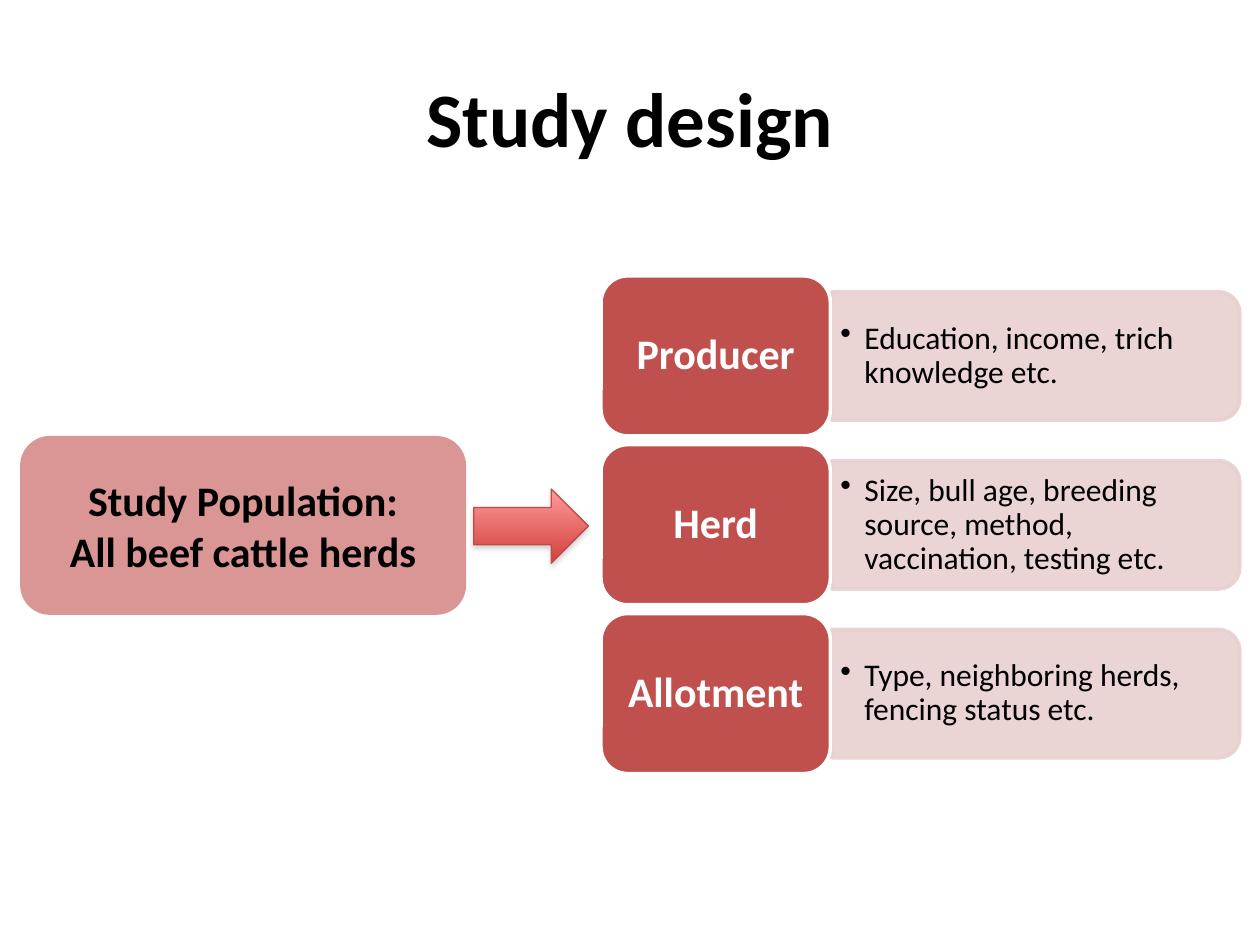
from dataclasses import dataclass

from lxml.etree import SubElement
from pptx import Presentation
from pptx.dml.color import RGBColor
from pptx.enum.shapes import MSO_SHAPE as Shape
from pptx.enum.text import MSO_ANCHOR as Anchor, PP_ALIGN as Align
from pptx.oxml.ns import qn
from pptx.util import Inches, Pt


@dataclass(frozen=True)
class Theme:
    font: str = "Calibri"
    black: str = "000000"
    white: str = "FFFFFF"
    red: str = "C0504D"
    rose: str = "D99694"
    pale: str = "E8D0D0"
    arrow_top: str = "FF9A99"
    arrow_bottom: str = "D1403C"
    arrow_line: str = "BE4B48"
    shadow: str = "808080"
    title_size: int = 44
    label_size: int = 24
    detail_size: int = 18


THEME = Theme()
FACTORS = [
    ("Producer", "Education, income, trich knowledge etc."),
    ("Herd", "Size, bull age, breeding source, method, vaccination, testing etc."),
    ("Allotment", "Type, neighboring herds, fencing status etc."),
]
FACTOR_TOP, FACTOR_PITCH = 2.19, 1.34
LABEL_LEFT, LABEL_WIDTH, LABEL_HEIGHT = 4.77, 1.82, 1.27
PANEL_LEFT, PANEL_WIDTH, PANEL_HEIGHT = 6.6, 3.24, 1.02
DETAIL_WIDTH, DETAIL_HEIGHT = 3.19, 0.92


def set_attributes(target, values):
    for name, value in values.items():
        setattr(target, name, value)


def write_text(box, lines, size, color, bold=True, align=Align.CENTER, spacing=None):
    frame = box.text_frame
    set_attributes(frame, {"word_wrap": True, "vertical_anchor": Anchor.MIDDLE})
    frame.text = "\n".join(lines)
    for para in frame.paragraphs:
        set_attributes(para, {"alignment": align, "line_spacing": spacing})
        for span in para.runs:
            set_attributes(span.font, {"name": THEME.font, "size": Pt(size), "bold": bold})
            span.font.color.rgb = RGBColor.from_string(color)


def add_block(shapes, kind, bounds, fill, line=None, line_width=2):
    block = shapes.add_shape(kind, *map(Inches, bounds))
    block.shadow.inherit = False
    block.fill.solid()
    block.fill.fore_color.rgb = RGBColor.from_string(fill)
    if line:
        block.line.color.rgb = RGBColor.from_string(line)
        block.line.width = Pt(line_width)
    else:
        block.line.fill.background()
    return block


def add_panel(shapes, middle):
    center = PANEL_LEFT + PANEL_WIDTH / 2
    bounds = (center - PANEL_HEIGHT / 2, middle - PANEL_WIDTH / 2, PANEL_HEIGHT, PANEL_WIDTH)
    panel = add_block(shapes, Shape.ROUND_2_SAME_RECTANGLE, bounds, THEME.pale, THEME.pale)
    panel.rotation = 90
    for color in panel._element.spPr.iter(qn("a:srgbClr")):
        SubElement(color, qn("a:alpha"), val="90000")


def add_detail(shapes, middle, text):
    bounds = (PANEL_LEFT, middle - DETAIL_HEIGHT / 2, DETAIL_WIDTH, DETAIL_HEIGHT)
    box = shapes.add_textbox(*map(Inches, bounds))
    write_text(box, [text], THEME.detail_size, THEME.black, False, Align.LEFT, 0.9)
    set_attributes(box.text_frame, {
        "margin_left": Inches(0.07), "margin_right": Inches(0.07),
        "margin_top": Inches(0.04), "margin_bottom": Inches(0.04),
    })
    para = box.text_frame.paragraphs[0]
    para.level = 1
    properties = para._p.get_or_add_pPr()
    properties.set("marL", str(Inches(0.19)))
    properties.set("indent", str(-Inches(0.19)))
    SubElement(properties, qn("a:buChar"), char="•")


def add_factor(shapes, top, label, detail):
    middle = top + LABEL_HEIGHT / 2
    add_panel(shapes, middle)
    add_detail(shapes, middle, detail)
    bounds = (LABEL_LEFT, top, LABEL_WIDTH, LABEL_HEIGHT)
    block = add_block(shapes, Shape.ROUNDED_RECTANGLE, bounds, THEME.red, THEME.white)
    write_text(block, [label], THEME.label_size, THEME.white, spacing=0.9)


def add_arrow(shapes, bounds):
    arrow = add_block(shapes, Shape.RIGHT_ARROW, bounds, THEME.red, THEME.arrow_line, 0.75)
    arrow.fill.gradient()
    arrow.fill.gradient_angle = 270
    colors = (THEME.arrow_top, THEME.arrow_bottom)
    for position, (stop, color) in enumerate(zip(arrow.fill.gradient_stops, colors)):
        stop.position = position
        stop.color.rgb = RGBColor.from_string(color)
    effects = arrow._element.spPr.find(qn("a:effectLst"))
    shadow = SubElement(effects, qn("a:outerShdw"), blurRad=str(Pt(3.1)),
                        dist=str(Pt(1.8)), dir="5400000", rotWithShape="0")
    color = SubElement(shadow, qn("a:srgbClr"), val=THEME.shadow)
    SubElement(color, qn("a:alpha"), val="35000")


def add_title(page, text):
    title = page.shapes.title
    set_attributes(title, {
        "left": Inches(0.5), "top": Inches(0.3),
        "width": Inches(9), "height": Inches(1.25),
    })
    write_text(title, [text], THEME.title_size, THEME.black)


def main():
    deck = Presentation()
    set_attributes(deck, {"slide_width": Inches(10), "slide_height": Inches(7.5)})
    page = deck.slides.add_slide(deck.slide_layouts[5])
    add_title(page, "Study design")
    factors = page.shapes.add_group_shape()
    for row, (label, detail) in enumerate(FACTORS):
        add_factor(factors.shapes, FACTOR_TOP + row * FACTOR_PITCH, label, detail)
    population = add_block(page.shapes, Shape.ROUNDED_RECTANGLE,
                           (0.16, 3.46, 3.54, 1.42), THEME.rose)
    write_text(population, ["Study Population:", "All beef cattle herds"],
               THEME.label_size, THEME.black)
    add_arrow(page.shapes, (3.76, 3.88, 0.91, 0.59))
    deck.save("out.pptx")


if __name__ == "__main__":
    main()
